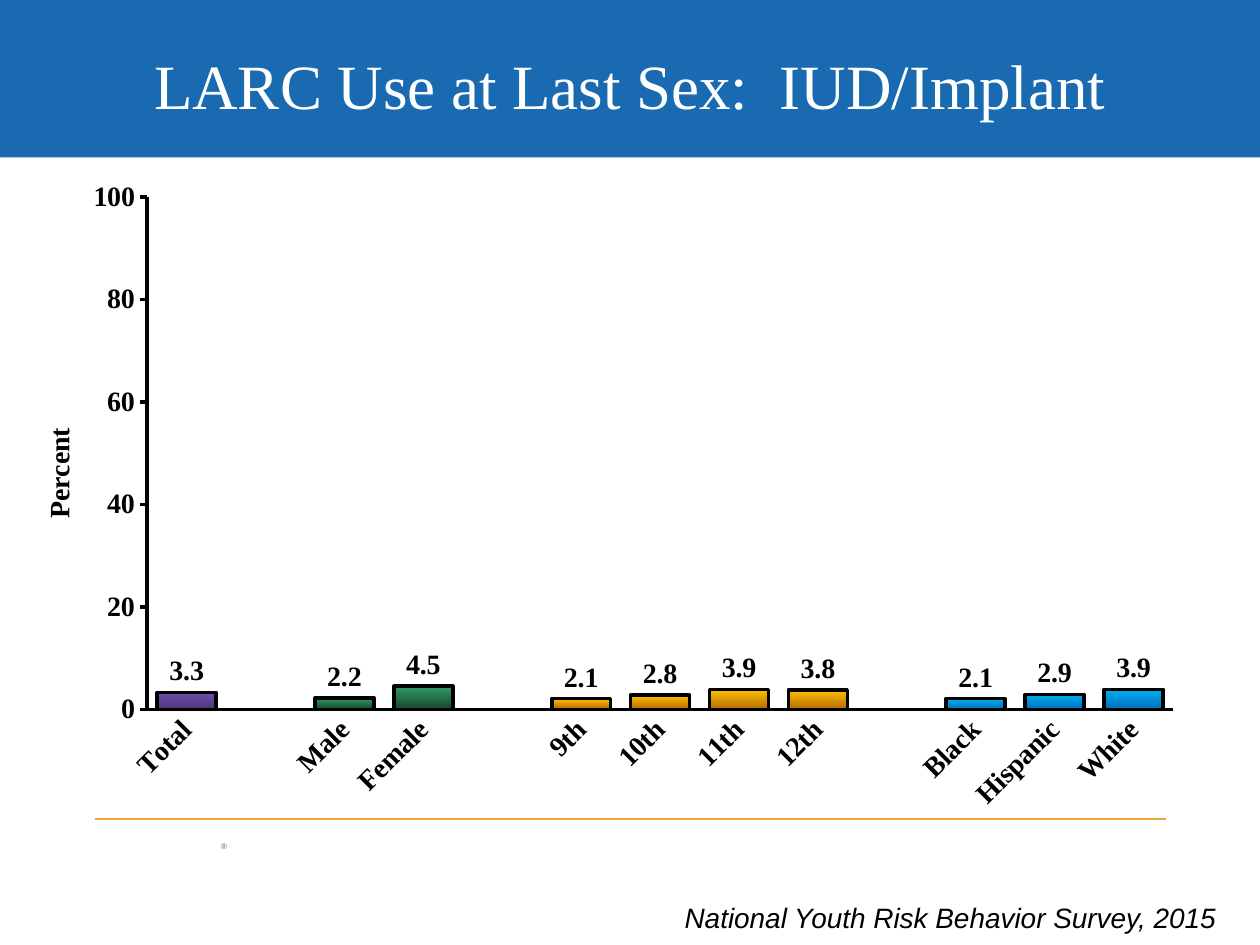
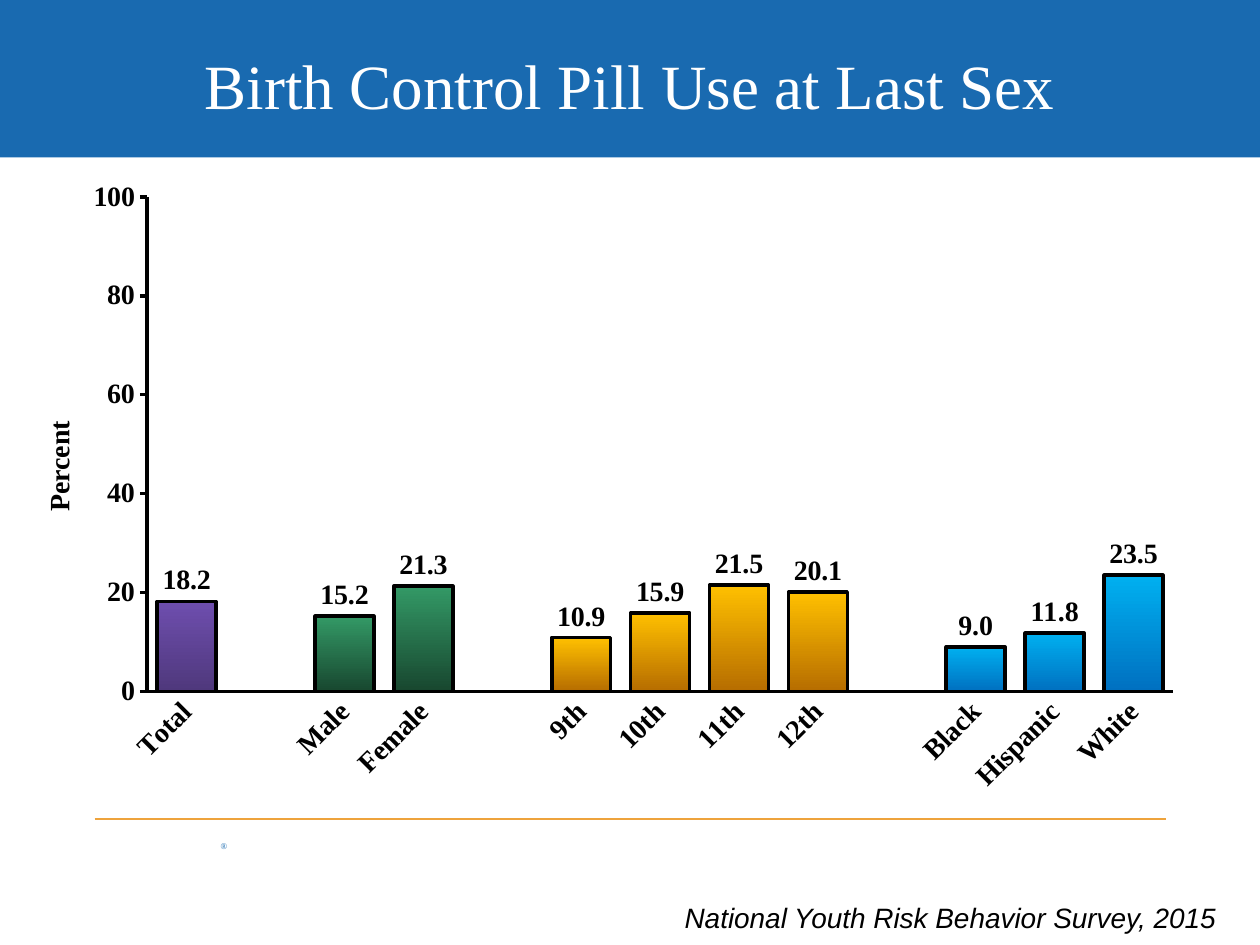
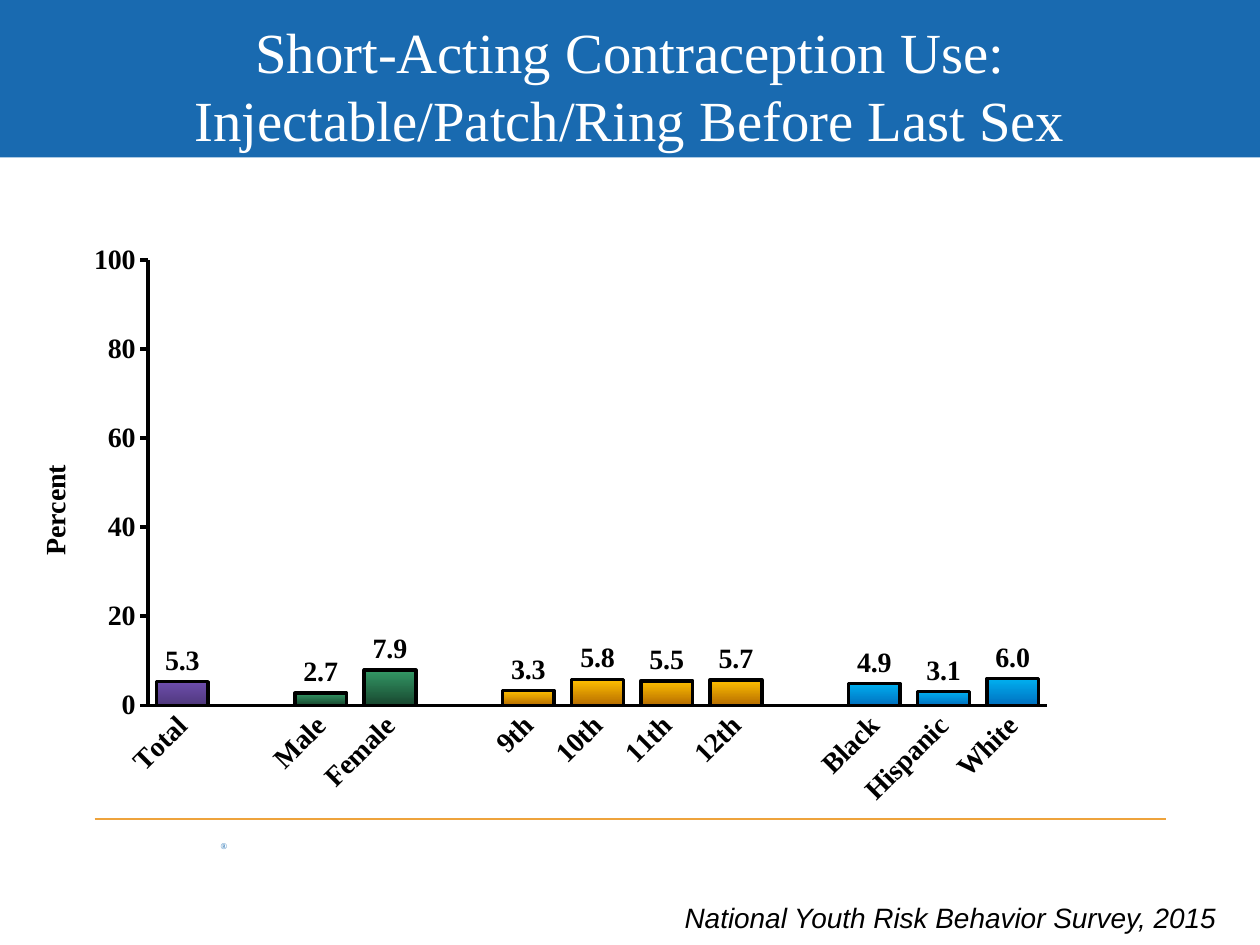
from lxml.etree import SubElement
from pptx import Presentation
from pptx.chart.data import CategoryChartData
from pptx.dml.color import RGBColor
from pptx.enum.chart import XL_CHART_TYPE, XL_LABEL_POSITION, XL_TICK_MARK
from pptx.enum.shapes import MSO_CONNECTOR, MSO_SHAPE
from pptx.enum.text import MSO_ANCHOR, MSO_AUTO_SIZE, PP_ALIGN
from pptx.oxml import parse_xml
from pptx.oxml.ns import nsdecls, qn
from pptx.util import Inches, Pt

WIDTH, HEIGHT = Inches(10), Inches(7.5)
COL, ROW = WIDTH / 40, HEIGHT / 30

BLUE = RGBColor(0x19, 0x6A, 0xB0)
GOLD = RGBColor(0xEE, 0xA3, 0x3C)
WHITE = RGBColor(0xFF, 0xFF, 0xFF)
BLACK = RGBColor(0, 0, 0)
STEEL = RGBColor(0x4F, 0x81, 0xBD)
PURPLE = RGBColor(0x6E, 0x4E, 0xAE), RGBColor(0x4F, 0x38, 0x7C)
GREEN = RGBColor(0x33, 0x99, 0x66), RGBColor(0x18, 0x47, 0x2F)
AMBER = RGBColor(0xFF, 0xC0, 0x00), RGBColor(0xB6, 0x6D, 0x00)
SKY = RGBColor(0x00, 0xB0, 0xF0), RGBColor(0x00, 0x70, 0xC0)

SERIF, SANS = "Times New Roman", "Arial"
SOURCE = "National Youth Risk Behavior Survey, 2015"
GROUPS = [
    (PURPLE, ["Total"]),
    (GREEN, ["Male", "Female"]),
    (AMBER, ["9th", "10th", "11th", "12th"]),
    (SKY, ["Black", "Hispanic", "White"]),
]

BAND = (0, 0, 40, 5)
TITLE = (2, 0.68, 36, 4)
RULE = (3, 26, 34, 0)
MARK = (7, 26.68, 1, 0.32)
FOOTER = (17, 28.4, 22, 2.56)
INSET = (4.68, 0.93, 0.76, 3.6)

SLIDES = [
    ("LARC Use at Last Sex:  IUD/Implant", 36, (0, 5.32, 38, 20.8),
     [[3.3], [2.2, 4.5], [2.1, 2.8, 3.9, 3.8], [2.1, 2.9, 3.9]]),
    ("Birth Control Pill Use at Last Sex", 36, (0, 5.32, 38, 20.24),
     [[18.2], [15.2, 21.3], [10.9, 15.9, 21.5, 20.1], [9, 11.8, 23.5]]),
    ("Short-Acting Contraception Use:\vInjectable/Patch/Ring Before Last Sex",
     32.4, (0, 7.32, 34, 18.68),
     [[5.3], [2.7, 7.9], [3.3, 5.8, 5.5, 5.7], [4.9, 3.1, 6]]),
]


def place(box):
    """Turn a box in columns and rows into slide lengths."""
    left, top, wide, high = box
    return [int(size) for size in (left * COL, top * ROW, wide * COL, high * ROW)]


def style(font, size, color, name=SERIF):
    """Set the size, colour and face of a font."""
    font.size, font.name, font.color.rgb = Pt(size), name, color


def add_text(slide, box, text, size, color, name=SERIF):
    """Add a wrapped one-line text box and return it."""
    shape = slide.shapes.add_textbox(*place(box))
    frame = shape.text_frame
    frame.word_wrap = True
    frame.text = text
    style(frame.paragraphs[0].runs[0].font, size, color, name)
    return shape


def add_frame(slide):
    """Add the band, rule, mark and footer that all slides share."""
    band = slide.shapes.add_shape(MSO_SHAPE.RECTANGLE, *place(BAND))
    band.shadow.inherit = False
    band.fill.solid()
    band.fill.fore_color.rgb = BLUE
    band.line.fill.background()

    left, top, wide, high = place(RULE)
    rule = slide.shapes.add_connector(
        MSO_CONNECTOR.STRAIGHT, left, top, left + wide, top + high)
    rule.line.color.rgb, rule.line.width = GOLD, Pt(0.75)
    SubElement(rule.element.spPr, qn("a:effectLst"))

    mark = add_text(slide, MARK, "®", 5, BLUE).text_frame
    mark.margin_left = mark.margin_right = mark.margin_top = mark.margin_bottom = 0

    line = add_text(slide, FOOTER, SOURCE, 16, BLACK, SANS).text_frame.paragraphs[0]
    line.alignment = PP_ALIGN.RIGHT
    line.runs[0].font.italic = True


def set_title(slide, box, text, size):
    """Fill the title placeholder and lift it above the band."""
    title = slide.shapes.title
    title.left, title.top, title.width, title.height = place(box)
    frame = title.text_frame
    frame.text = text
    frame.word_wrap = True
    frame.auto_size = MSO_AUTO_SIZE.NONE
    frame.vertical_anchor = MSO_ANCHOR.MIDDLE
    line = frame.paragraphs[0]
    line.alignment = PP_ALIGN.CENTER
    for run in line.runs:
        style(run.font, size, WHITE)
    title.element.getparent().append(title.element)


def pin(node, index, inner=False, **shares):
    """Give a chart part a fixed place in shares of the chart."""
    for old in node.findall(qn("c:layout")):
        node.remove(old)
    target = '<c:layoutTarget val="inner"/>' if inner else ""
    modes = '<c:xMode val="edge"/><c:yMode val="edge"/>'
    sizes = "".join(f'<c:{key} val="{share:.3f}"/>' for key, share in shares.items())
    node.insert(index, parse_xml(
        f'<c:layout {nsdecls("c")}><c:manualLayout>{target}{modes}{sizes}'
        "</c:manualLayout></c:layout>"))


def spread(parts):
    """Join groups into one list with a blank slot between them."""
    slots = []
    for part in parts:
        slots += [None] * bool(slots) + list(part)
    return slots


def paint(bars):
    """Fill each bar with the gradient of its group."""
    shades = spread([shade] * len(names) for shade, names in GROUPS)
    bars.format.fill.solid()
    bars.format.fill.fore_color.rgb = STEEL
    for index, shade in enumerate(shades):
        if shade:
            look = bars.points[index].format
            look.fill.gradient()
            look.fill.gradient_angle = 270
            for stop, color in zip(look.fill.gradient_stops, shade):
                stop.color.rgb = color
            look.line.color.rgb, look.line.width = BLACK, Pt(2)


def set_axes(chart):
    """Format both axes and the title of the value axis."""
    names, scale = chart.category_axis, chart.value_axis
    for axis, tick in ((names, XL_TICK_MARK.NONE), (scale, XL_TICK_MARK.OUTSIDE)):
        axis.has_major_gridlines = False
        axis.major_tick_mark, axis.minor_tick_mark = tick, XL_TICK_MARK.NONE
        axis.format.line.color.rgb, axis.format.line.width = BLACK, Pt(2)
        style(axis.tick_labels.font, 16, BLACK)
        axis.tick_labels.font.bold = True
    scale.minimum_scale, scale.maximum_scale, scale.major_unit = 0, 100, 20
    frame = scale.axis_title.text_frame
    frame.text = "Percent"
    font = frame.paragraphs[0].runs[0].font
    style(font, 16, BLACK)
    font.bold = True
    turns = {"//c:catAx/c:txPr/a:bodyPr": -45, "//c:valAx/c:title//a:bodyPr": -90}
    for query, angle in turns.items():
        body = chart.element.xpath(query)[0]
        body.set("rot", str(angle * 60000))
        body.set("vert", "horz")


def add_bars(slide, box, values):
    """Add the column chart, with its plot set in from the box."""
    data = CategoryChartData(number_format="General")
    data.categories = [name or "" for name in spread(names for _, names in GROUPS)]
    data.add_series("Series 1", spread(values))
    chart = slide.shapes.add_chart(
        XL_CHART_TYPE.COLUMN_CLUSTERED, *place(box), data).chart
    chart.has_legend = chart.has_title = False
    style(chart.font, 18, BLACK)

    plot = chart.plots[0]
    plot.vary_by_categories = False
    plot.gap_width, plot.overlap = 34, 100
    plot.has_data_labels = True
    labels = plot.data_labels
    labels.show_value = True
    labels.position = XL_LABEL_POSITION.OUTSIDE_END
    labels.number_format, labels.number_format_is_linked = "#,##0.0", False
    style(labels.font, 16, BLACK)
    labels.font.bold = True

    paint(plot.series[0])
    set_axes(chart)
    wide, high = box[2:]
    left, top, right, base = INSET
    pin(chart.element.xpath("//c:plotArea")[0], 0, inner=True,
        x=left / wide, y=top / high,
        w=1 - (left + right) / wide, h=1 - (top + base) / high)
    pin(chart.element.xpath("//c:valAx/c:title")[0], 1, x=0.03, y=0.39)


def main():
    """Build and save the deck."""
    deck = Presentation()
    deck.slide_width, deck.slide_height = WIDTH, HEIGHT
    for title, size, box, values in SLIDES:
        slide = deck.slides.add_slide(deck.slide_layouts[5])
        add_frame(slide)
        set_title(slide, TITLE, title, size)
        add_bars(slide, box, values)
    deck.save("out.pptx")


if __name__ == "__main__":
    main()
